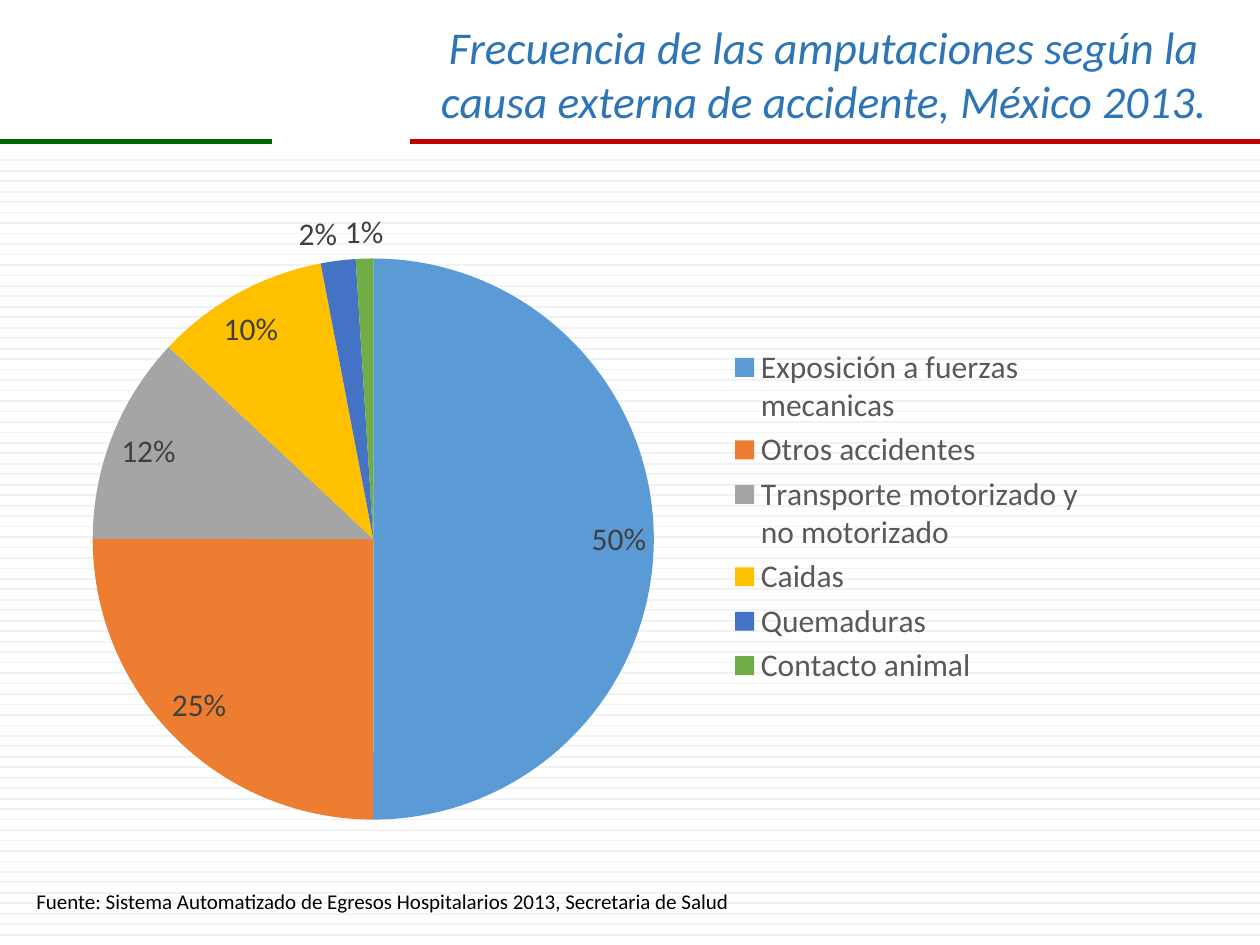
from dataclasses import dataclass

from lxml.etree import SubElement
from pptx import Presentation
from pptx.chart.data import CategoryChartData
from pptx.dml.color import RGBColor as Color
from pptx.enum.chart import XL_CHART_TYPE as ChartType
from pptx.enum.chart import XL_LABEL_POSITION as LabelPlace
from pptx.enum.chart import XL_LEGEND_POSITION as LegendPlace
from pptx.enum.shapes import MSO_CONNECTOR as Connector
from pptx.enum.text import MSO_AUTO_SIZE as AutoSize
from pptx.enum.text import PP_ALIGN as Align
from pptx.oxml import parse_xml
from pptx.oxml.ns import nsdecls, qn
from pptx.util import Pt

WIDTH, HEIGHT = 720, 540


@dataclass(frozen=True)
class Theme:
    font: str = "Calibri"
    title_size: int = 26
    chart_size: int = 18
    source_size: int = 12
    title: str = "2E75B6"
    text: str = "000000"
    label: str = "404040"
    legend: str = "595959"
    stripe: str = "F2F2F2"
    green: str = "006600"
    red: str = "C00000"
    slices: tuple = ("5B9BD5", "ED7D31", "A5A5A5", "FFC000", "4472C4", "70AD47")


class PageBuilder:
    def __init__(self, page, theme):
        self.page = page
        self.theme = theme

    def style(self, font, size, color, **extra):
        values = {"name": self.theme.font, "size": Pt(size), **extra}
        for key, value in values.items():
            setattr(font, key, value)
        font.color.rgb = Color.from_string(color)

    def rule(self, left, right, top, color, weight, shapes=None):
        shapes = shapes or self.page.shapes
        line = shapes.add_connector(
            Connector.STRAIGHT, Pt(left), Pt(top), Pt(right), Pt(top))
        line.line.color.rgb = Color.from_string(color)
        line.line.width = Pt(weight)
        SubElement(line._element.spPr, qn("a:effectLst"))

    def stripes(self, first, gap, count):
        group = self.page.shapes.add_group_shape()
        for index in range(count):
            self.rule(0, WIDTH, first + index * gap, self.theme.stripe, 1, group.shapes)

    def text(self, frame, words, size, color, align=Align.LEFT, **extra):
        box = self.page.shapes.add_textbox(*map(Pt, frame))
        box.text_frame.word_wrap = True
        box.text_frame.auto_size = AutoSize.SHAPE_TO_FIT_TEXT
        para = box.text_frame.paragraphs[0]
        para.alignment = align
        span = para.add_run()
        span.text = words
        self.style(span.font, size, color, **extra)

    def pie(self, frame, name, shares, plot_area):
        theme = self.theme
        data = CategoryChartData()
        data.categories = list(shares)
        data.add_series(name, list(shares.values()))
        chart = self.page.shapes.add_chart(ChartType.PIE, *map(Pt, frame), data).chart
        self.style(chart.font, theme.chart_size, theme.text)
        chart.has_title = False

        # Legend
        chart.has_legend = True
        chart.legend.position = LegendPlace.RIGHT
        chart.legend.include_in_layout = False
        self.style(chart.legend.font, theme.chart_size, theme.legend)

        # Slices and percentages
        plot = chart.plots[0]
        plot.vary_by_categories = True
        for index, color in enumerate(theme.slices):
            fill = plot.series[0].points[index].format.fill
            fill.solid()
            fill.fore_color.rgb = Color.from_string(color)
        labels = plot.series[0].data_labels
        options = {"show_percentage": True, "show_value": False,
                   "number_format": "0%", "number_format_is_linked": False,
                   "position": LabelPlace.BEST_FIT}
        for key, value in options.items():
            setattr(labels, key, value)
        self.style(labels.font, theme.chart_size, theme.label)

        # Place of the pie, as fractions of the chart
        area = chart._chartSpace.chart.plotArea
        for old in area.findall(qn("c:layout")):
            area.remove(old)
        places = "".join(f'<c:{key} val="{value}"/>' for key, value in plot_area.items())
        area.insert(0, parse_xml(
            f'<c:layout {nsdecls("c")}><c:manualLayout><c:layoutTarget val="inner"/>'
            f'<c:xMode val="edge"/><c:yMode val="edge"/>{places}'
            "</c:manualLayout></c:layout>"))


def main():
    deck = Presentation()
    deck.slide_width, deck.slide_height = Pt(WIDTH), Pt(HEIGHT)
    theme = Theme()
    builder = PageBuilder(deck.slides.add_slide(deck.slide_layouts[6]), theme)

    # Striped background and header rules
    builder.stripes(first=91.6, gap=5.98, count=75)
    builder.rule(0, 155.5, 80.8, theme.green, 3)
    builder.rule(234, WIDTH, 80.8, theme.red, 3)

    # Source
    builder.text(
        (13.7, 504, 594.7, 21.8),
        "Fuente: Sistema Automatizado de Egresos Hospitalarios 2013, Secretaria de Salud",
        theme.source_size, theme.text)

    # Causes of amputation
    shares = {
        "Exposición a fuerzas mecanicas": 50,
        "Otros accidentes": 25,
        "Transporte motorizado y no motorizado": 12,
        "Caidas": 10,
        "Quemaduras": 2,
        "Contacto animal": 1,
    }
    builder.pie((13.7, 110.9, 614.2, 368.6), "Series 1", shares,
                {"x": 0.06, "y": 0.1, "w": 0.53, "h": 0.87})

    # Title
    builder.text(
        (221.8, 7.2, 498.2, 70.6),
        "Frecuencia de las amputaciones según la causa externa de accidente, México 2013.",
        theme.title_size, theme.title, Align.CENTER, italic=True)

    deck.save("out.pptx")


if __name__ == "__main__":
    main()
